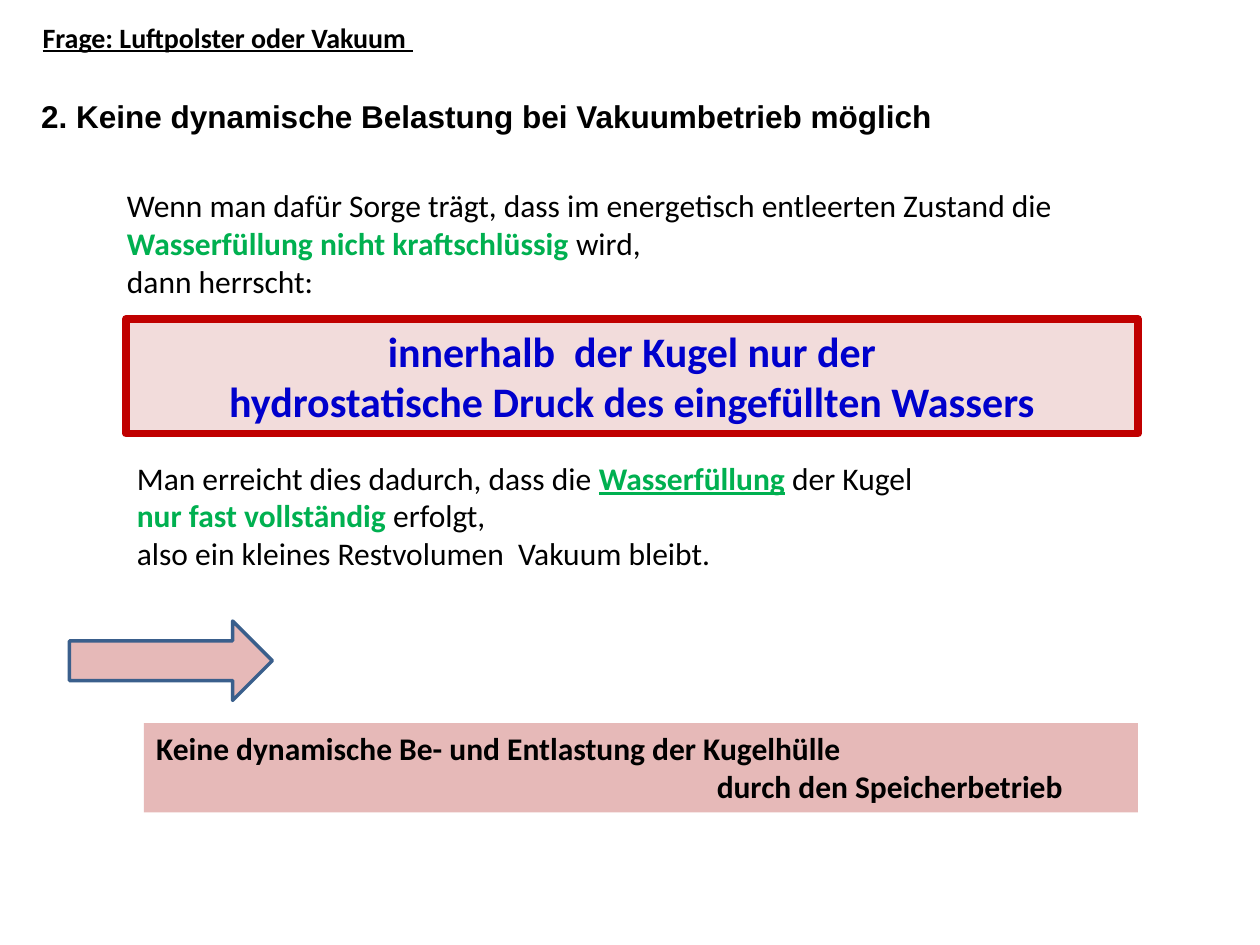
"""Build the slide on avoiding dynamic load under vacuum operation."""
from dataclasses import dataclass
from typing import Optional

from lxml import etree
from pptx import Presentation
from pptx import util as u
from pptx.dml.color import RGBColor
from pptx.enum import shapes, text
from pptx.oxml.ns import qn

BLACK, GREEN, BLUE = "000000", "00B050", "0000CC"
ROSE, PALE_ROSE, RED, STEEL = "E6B9B8", "F2DCDB", "C00000", "3A5F8C"


@dataclass(frozen=True)
class Run:
    words: str
    color: str = BLACK
    bold: bool = False
    underline: bool = False


@dataclass(frozen=True)
class Line:
    runs: tuple[Run, ...]
    indent: float = 0


@dataclass(frozen=True)
class Block:
    left: float
    top: float
    width: float
    height: float
    lines: tuple[Line, ...] = ()
    size: int = 18
    font: str = "Calibri"
    centered: bool = False
    preset: Optional[shapes.MSO_SHAPE] = None
    fill: str = ""
    border: str = ""
    border_width: float = 0


def paint(color_format, color: str) -> None:
    color_format.rgb = RGBColor.from_string(color)


def style_shape(shape, block: Block) -> None:
    shape.shadow.inherit = False
    shape.fill.solid()
    paint(shape.fill.fore_color, block.fill)
    if not block.border:
        shape.line.fill.background()
        return
    shape.line.width = u.Pt(block.border_width)
    paint(shape.line.color, block.border)
    etree.SubElement(shape.line._get_or_add_ln(), qn("a:round"))


def write_lines(frame, block: Block) -> None:
    frame.word_wrap = True
    frame.vertical_anchor = text.MSO_ANCHOR.TOP
    for index, line in enumerate(block.lines):
        paragraph = frame.add_paragraph() if index else frame.paragraphs[0]
        paragraph.alignment = text.PP_ALIGN.CENTER if block.centered else text.PP_ALIGN.LEFT
        if line.indent:
            paragraph._p.get_or_add_pPr().set("marL", str(u.Cm(line.indent)))
        for part in line.runs:
            run = paragraph.add_run()
            run.text = part.words
            run.font.name = block.font
            run.font.size = u.Pt(block.size)
            run.font.bold = part.bold
            run.font.underline = part.underline
            paint(run.font.color, part.color)


def draw(slide, block: Block) -> None:
    place = [u.Cm(length) for length in (block.left, block.top, block.width, block.height)]
    if block.preset is None:
        shape = slide.shapes.add_textbox(*place)
    else:
        shape = slide.shapes.add_shape(block.preset, *place)
        style_shape(shape, block)
    if block.lines:
        write_lines(shape.text_frame, block)


BLOCKS = (
    Block(0.61, 0.28, 11.81, 0.94, size=16, lines=(
        Line((Run("Frage: Luftpolster oder Vakuum ", bold=True, underline=True),)),
    )),
    Block(0.58, 1.83, 24.31, 1.02, font="Arial", lines=(
        Line((Run("2. Keine dynamische Belastung bei Vakuumbetrieb möglich", bold=True),)),
    )),
    Block(2.31, 3.63, 20.62, 3.33, lines=(
        Line((
            Run("Wenn man dafür Sorge trägt, dass im energetisch entleerten Zustand die "),
            Run("Wasserfüllung nicht kraftschlüssig ", GREEN, bold=True),
            Run("wird,"),
        )),
        Line((Run("dann herrscht:"),)),
    )),
    Block(2.54, 6.43, 20.4, 2.31, size=24, centered=True, preset=shapes.MSO_SHAPE.RECTANGLE,
          fill=PALE_ROSE, border=RED, border_width=4.5, lines=(
              Line((Run("innerhalb  der Kugel nur der", BLUE, bold=True),)),
              Line((Run("hydrostatische Druck des eingefüllten Wassers", BLUE, bold=True),)),
          )),
    Block(2.51, 9.12, 16.61, 2.57, lines=(
        Line((
            Run("Man erreicht dies dadurch, dass die "),
            Run("Wasserfüllung", GREEN, bold=True, underline=True),
            Run(" der Kugel "),
            Run("nur fast vollständig ", GREEN, bold=True),
            Run("erfolgt,"),
        )),
        Line((Run("also ein kleines Restvolumen  Vakuum bleibt."),)),
    )),
    Block(1.4, 12.52, 4.09, 1.6, preset=shapes.MSO_SHAPE.RIGHT_ARROW,
          fill=ROSE, border=STEEL, border_width=2),
    Block(2.9, 14.58, 20.04, 1.8, preset=shapes.MSO_SHAPE.RECTANGLE, fill=ROSE, lines=(
        Line((Run("Keine dynamische Be- und Entlastung der Kugelhülle", bold=True),)),
        Line((Run("durch den Speicherbetrieb", bold=True),), indent=11.3),
    )),
)


def main() -> None:
    presentation = Presentation()
    presentation.slide_width, presentation.slide_height = u.Cm(25.4), u.Cm(19.05)
    slide = presentation.slides.add_slide(presentation.slide_layouts[6])
    for block in BLOCKS:
        draw(slide, block)
    presentation.save("out.pptx")


if __name__ == "__main__":
    main()
